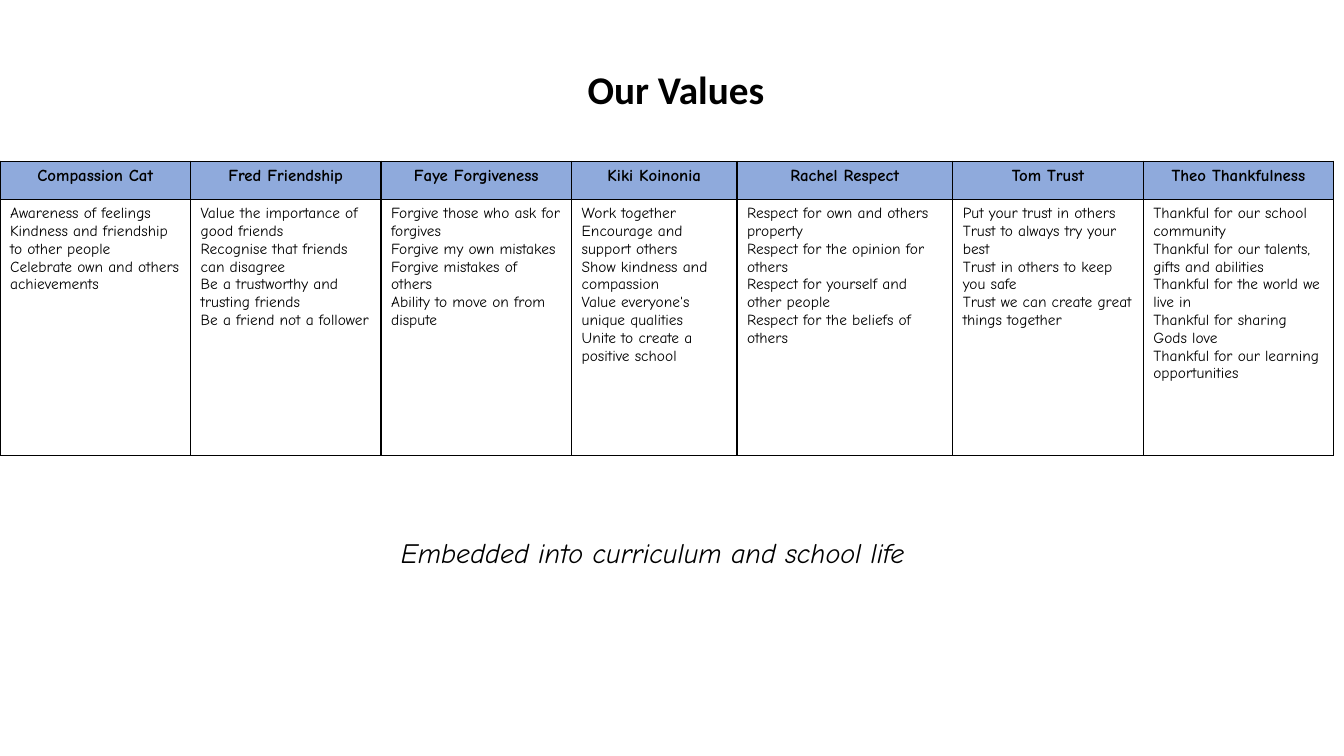
from lxml import etree
from pptx import Presentation
from pptx import util as u
from pptx.dml.color import RGBColor
from pptx.enum import text
from pptx.oxml.ns import qn

COLORS = {"ink": "000000", "header": "8FAADC"}
COLUMN_WIDTHS = [1.89, 1.89, 1.89, 1.64, 2.14, 1.89, 1.89]
ROW_HEIGHTS = [0.38, 2.54]
VALUES = {
    "Compassion Cat": [
        "Awareness of feelings",
        "Kindness and friendship to other people",
        "Celebrate own and others achievements",
    ],
    "Fred Friendship": [
        "Value the importance of good friends",
        "Recognise that friends can disagree",
        "Be a trustworthy and trusting friends",
        "Be a friend not a follower",
    ],
    "Faye Forgiveness": [
        "Forgive those who ask for forgives",
        "Forgive my own mistakes",
        "Forgive mistakes of others",
        "Ability to move on from dispute",
    ],
    "Kiki Koinonia": [
        "Work together",
        "Encourage and support others",
        "Show kindness and compassion",
        "Value everyone's unique qualities",
        "Unite to create a positive school",
    ],
    "Rachel Respect": [
        "Respect for own and others property",
        "Respect for the opinion for others",
        "Respect for yourself and other people",
        "Respect for the beliefs of others",
    ],
    "Tom Trust": [
        "Put your trust in others",
        "Trust to always try your best",
        "Trust in others to keep you safe",
        "Trust we can create great things together",
    ],
    "Theo Thankfulness": [
        "Thankful for our school community",
        "Thankful for our talents, gifts and abilities",
        "Thankful for the world we live in",
        "Thankful for sharing Gods love",
        "Thankful for our learning opportunities",
    ],
}


class ValuesSlide:
    font = "Comic Neue"

    def __init__(self, prs):
        self.s = prs.slides.add_slide(prs.slide_layouts[6])

    def add_lines(self, tf, lines, size, font=None, bold=False, italic=False, align=text.PP_ALIGN.LEFT):
        for i, line in enumerate(lines):
            p = tf.add_paragraph() if i else tf.paragraphs[0]
            p.alignment = align
            r = p.add_run()
            r.text = line
            r.font.size = u.Pt(size)
            r.font.name = font or self.font
            r.font.bold = bold
            r.font.italic = italic
            r.font.color.rgb = RGBColor.from_string(COLORS["ink"])

    def text_box(self, box, line, size, **style):
        tf = self.s.shapes.add_textbox(*map(u.Inches, box)).text_frame
        tf.word_wrap = True
        self.add_lines(tf, [line], size, **style)
        return tf

    def border(self, cell):
        tcPr = cell._tc.get_or_add_tcPr()
        for i, side in enumerate(("lnL", "lnR", "lnT", "lnB")):
            ln = etree.Element(qn("a:" + side), w=str(u.Pt(1)))
            fill = etree.SubElement(ln, qn("a:solidFill"))
            etree.SubElement(fill, qn("a:srgbClr"), val=COLORS["ink"])
            tcPr.insert(i, ln)

    def cell(self, cell, lines, size, fill=None, **style):
        if fill:
            cell.fill.solid()
            cell.fill.fore_color.rgb = RGBColor.from_string(COLORS[fill])
        else:
            cell.fill.background()
        self.border(cell)
        self.add_lines(cell.text_frame, lines, size, **style)

    def table(self, left, top, widths, heights, values):
        size = (left, top, sum(widths), sum(heights))
        tbl = self.s.shapes.add_table(len(heights), len(widths), *map(u.Inches, size)).table
        for col, width in zip(tbl.columns, widths):
            col.width = u.Inches(width)
        for row, height in zip(tbl.rows, heights):
            row.height = u.Inches(height)
        for i, (name, lines) in enumerate(values.items()):
            self.cell(tbl.cell(0, i), [name], 12, "header", bold=True, align=text.PP_ALIGN.CENTER)
            self.cell(tbl.cell(1, i), lines, 11)


def main():
    prs = Presentation()
    prs.slide_width, prs.slide_height = u.Inches(13.33), u.Inches(7.5)
    slide = ValuesSlide(prs)
    tf = slide.text_box((3.48, 5.3, 5.99, 1.2), "Embedded into curriculum and school life", 20,
                        italic=True, align=text.PP_ALIGN.CENTER)
    p = tf.paragraphs[0]
    p.line_spacing = 0.9
    p.space_before = u.Pt(10)
    slide.table(0, 1.6, COLUMN_WIDTHS, ROW_HEIGHTS, VALUES)
    tf = slide.text_box((5.73, 0.6, 2.56, 0.57), "Our Values", 28, font="Calibri", bold=True)
    tf.auto_size = text.MSO_AUTO_SIZE.SHAPE_TO_FIT_TEXT
    prs.save("out.pptx")


if __name__ == "__main__":
    main()
